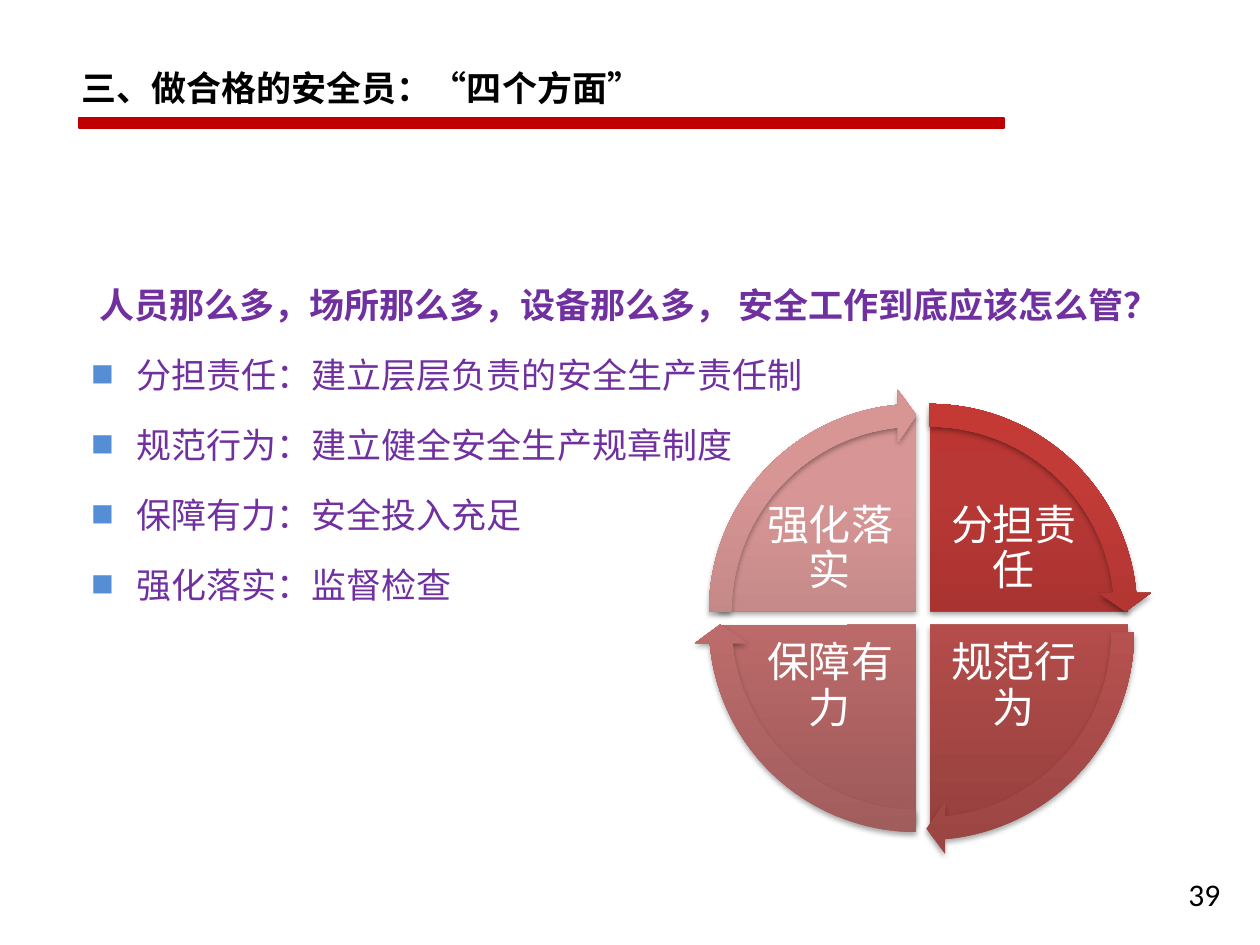
"""Build the safety officer slide with its four-part cycle diagram."""
from dataclasses import dataclass

from pptx import Presentation, oxml, util as u
from pptx.dml.color import RGBColor
from pptx.enum import shapes, text
from pptx.oxml import ns


@dataclass(frozen=True)
class Theme:
    cjk: str = "Noto Sans CJK SC"
    latin: str = "Calibri"
    black: str = "000000"
    white: str = "FFFFFF"
    red: str = "C00000"
    purple: str = "7030A0"
    bullet: str = "558ED5"
    body: int = 20
    label: int = 24
    number: int = 18
    leading: int = 36
    before: int = 4


THEME = Theme()
PX = u.Inches(1) / 126
TITLE = "三、做合格的安全员：“四个方面”"
QUESTION = "人员那么多，场所那么多，设备那么多， 安全工作到底应该怎么管？"
POINTS = [
    "分担责任：建立层层负责的安全生产责任制",
    "规范行为：建立健全安全生产规章制度",
    "保障有力：安全投入充足",
    "强化落实：监督检查",
]
QUARTERS = [
    {"right": True, "bottom": False, "arrow": (707, 389),
     "pie": ("8E2B28", "B83835", "BB3632"), "ring": ("952D2B", "C23B37", "C53935")},
    {"right": True, "bottom": True, "arrow": (704, 410),
     "pie": ("98413F", "C55451", "C95250"), "ring": ("9A4543", "C85957", "CB5855")},
    {"right": False, "bottom": True, "arrow": (694, 402),
     "pie": ("9E5A59", "CE7574", "D07472"), "ring": ("9F5C5B", "CF7776", "D27675")},
    {"right": False, "bottom": False, "arrow": (694, 389),
     "pie": ("A57373", "D79695", "D99594"), "ring": ("A57372", "D79594", "D99493")},
]
PIE_SIZE, ARROW_SIZE = 396, 445
HANG = 45


def emu(*lengths):
    return [round(length * PX) for length in lengths]


def xml(markup):
    return oxml.parse_xml(markup.replace(">", f" {ns.nsdecls('a')}>", 1))


def style(paragraph, size, color, face, bold=False):
    font = paragraph.font
    font.size, font.bold, font.name = u.Pt(size), bold, face
    font.color.rgb = RGBColor.from_string(color)
    for run in paragraph.runs:
        run.font.name = face
        run.font._element.get_or_add_latin().addnext(xml(f'<a:ea typeface="{face}"></a:ea>'))


def add_text(slide, box, lines):
    frame = slide.shapes.add_textbox(*emu(*box)).text_frame
    frame.word_wrap = True
    frame.text = "\n".join(lines)
    return frame


def style_body(paragraph, color, bold=False, start=0, bulleted=False):
    style(paragraph, THEME.body, color, THEME.cjk, bold)
    paragraph.line_spacing = u.Pt(THEME.leading)
    paragraph.space_before = u.Pt(THEME.before)
    properties = paragraph._p.get_or_add_pPr()
    margin, indent = emu(HANG, start - HANG)
    properties.set("marL", str(margin))
    properties.set("indent", str(indent))
    if bulleted:
        default_run = properties.find(ns.qn("a:defRPr"))
        for markup in (
            f'<a:buClr><a:srgbClr val="{THEME.bullet}"/></a:buClr>',
            '<a:buSzPct val="65000"></a:buSzPct>',
            f'<a:buFont typeface="{THEME.cjk}"></a:buFont>',
            '<a:buChar char="■"></a:buChar>',
        ):
            default_run.addprevious(xml(markup))


def add_gradient_shape(slide, kind, box, adjustments, colors):
    shape = slide.shapes.add_shape(kind, *emu(*box))
    for index, value in enumerate(adjustments):
        shape.adjustments[index] = value
    shape.line.fill.background()
    shape.shadow.inherit = False
    properties = shape._element.spPr
    stops = "".join(
        f'<a:gs pos="{position}"><a:srgbClr val="{color}"/></a:gs>'
        for position, color in zip((0, 80000, 100000), colors)
    )
    properties.find(ns.qn("a:ln")).addprevious(xml(
        f'<a:gradFill><a:gsLst>{stops}</a:gsLst><a:lin ang="16200000" scaled="0"/></a:gradFill>'))
    properties.find(ns.qn("a:effectLst")).append(xml(
        '<a:outerShdw blurRad="40000" dist="23000" dir="5400000" rotWithShape="0">'
        f'<a:srgbClr val="{THEME.black}"><a:alpha val="35000"/></a:srgbClr></a:outerShdw>'))


def add_label(slide, box, label):
    frame = add_text(slide, box, [label])
    frame.vertical_anchor = text.MSO_ANCHOR.MIDDLE
    frame.margin_left = frame.margin_right = frame.margin_top = frame.margin_bottom = u.Inches(0.03)
    paragraph = frame.paragraphs[0]
    paragraph.alignment = text.PP_ALIGN.CENTER
    paragraph.line_spacing = 0.9
    style(paragraph, THEME.label, THEME.white, THEME.latin)


def add_cycle(slide):
    for index, (quarter, point) in enumerate(zip(QUARTERS, POINTS)):
        right, bottom = quarter["right"], quarter["bottom"]
        start, end = (162 + 54 * index) % 216, 54 * index
        pie_box = (732 if right else 718, 427 if bottom else 413, PIE_SIZE, PIE_SIZE)
        add_gradient_shape(slide, shapes.MSO_SHAPE.PIE, pie_box, (start, end), quarter["pie"])
        label_box = (941 if right else 757, 633 if bottom else 495, 146, 108)
        add_label(slide, label_box, point.split("：")[0])
    for index, quarter in enumerate(QUARTERS):
        start = (162 + 54 * index) % 216
        end = (212.725 + 54 * index) % 216
        add_gradient_shape(
            slide, shapes.MSO_SHAPE.CIRCULAR_ARROW, (*quarter["arrow"], ARROW_SIZE, ARROW_SIZE),
            (0.051, 3.275, end, start, 0.059), quarter["ring"])


def main():
    presentation = Presentation()
    presentation.slide_width, presentation.slide_height = emu(1260, 945)
    slide = presentation.slides.add_slide(presentation.slide_layouts[6])

    number = add_text(slide, (1176, 869, 79, 50), ["39"])
    style(number.paragraphs[0], THEME.number, THEME.black, THEME.latin)

    rule = slide.shapes.add_shape(shapes.MSO_SHAPE.RECTANGLE, *emu(79, 118, 925, 10))
    rule.shadow.inherit = False
    rule.fill.solid()
    rule.fill.fore_color.rgb = rule.line.color.rgb = RGBColor.from_string(THEME.red)
    rule.line.width = u.Pt(0.75)

    question, *points = add_text(slide, (79, 256, 1082, 364), [QUESTION, *POINTS]).paragraphs
    style_body(question, THEME.purple, bold=True, start=8)
    for paragraph in points:
        style_body(paragraph, THEME.purple, bulleted=True)

    add_cycle(slide)

    title = add_text(slide, (69, 39, 629, 69), [TITLE])
    style_body(title.paragraphs[0], THEME.black, bold=True)
    presentation.save("out.pptx")


if __name__ == "__main__":
    main()
